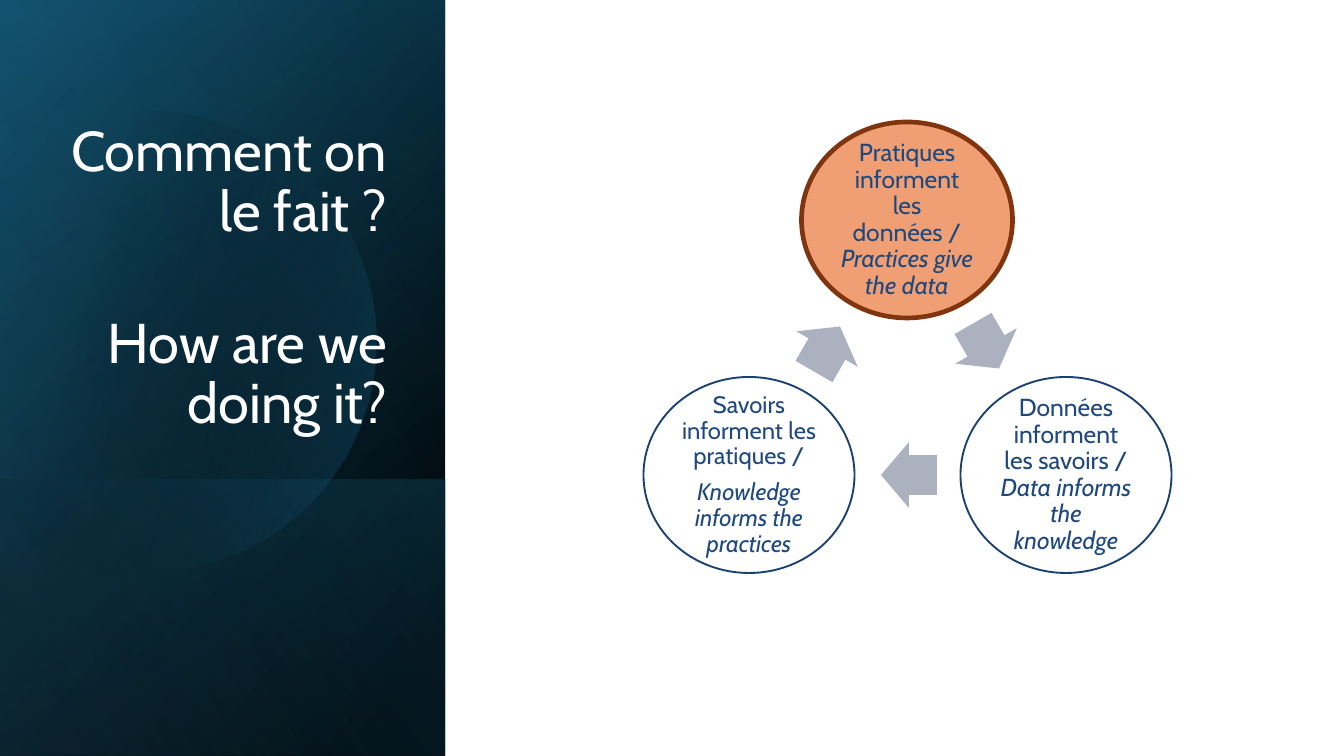
from math import acos, cos, sin

from lxml import etree
from pptx import Presentation
from pptx.dml.color import RGBColor
from pptx.enum.shapes import MSO_SHAPE
from pptx.enum.text import MSO_ANCHOR, PP_ALIGN
from pptx.oxml.ns import qn
from pptx.util import Pt

RECT, OVAL, ARROW = MSO_SHAPE.RECTANGLE, MSO_SHAPE.OVAL, MSO_SHAPE.RIGHT_ARROW
MIDDLE, BOTTOM = MSO_ANCHOR.MIDDLE, MSO_ANCHOR.BOTTOM
CENTER, RIGHT = PP_ALIGN.CENTER, PP_ALIGN.RIGHT

WHITE = RGBColor(0xFF, 0xFF, 0xFF)
BLACK = RGBColor(0x00, 0x00, 0x00)
NAVY = RGBColor(0x10, 0x48, 0x62)
TEAL = RGBColor(0x15, 0x60, 0x82)
SKY = RGBColor(0x46, 0xB1, 0xE1)
INK = RGBColor(0x1F, 0x49, 0x7D)
EDGE = RGBColor(0x1B, 0x41, 0x71)
ORANGE = RGBColor(0xE9, 0x71, 0x32)
BROWN = RGBColor(0x80, 0x35, 0x0E)
GRAY = RGBColor(0xAB, 0xB1, 0xBF)

PX = 914400 / 67.2
WIDE, HIGH = 1344, 756
PANEL = 445

# Gradient stops: position %, colour, opacity %
BASE = [(8, BLACK, 100), (100, NAVY, 100)]
GLOW = [(0, BLACK, 0), (99, TEAL, 46)]
FOOT = [(2, TEAL, 29), (100, BLACK, 30)]
DISC = [(29, BLACK, 0), (100, TEAL, 43)]
SHEEN = [(0, BLACK, 0), (99, SKY, 11)]

# Panel layers: top, stops, angle
UNDER = [(0, BASE, 50), (0, GLOW, 30), (480, FOOT, 130)]
OVER = [(0, SHEEN, 120)]

TITLE = [[("Comment on le fait ?", False)], [("How are we doing it?", False)]]

# Stages: centre, paragraphs, text size, fill, opacity %, line colour, line width
STAGES = [
    ((907, 220), [[("Pratiques informent les données / ", False),
                   ("Practices give the data", True)]],
     26.4, ORANGE, 68, BROWN, 5),
    ((1066, 475), [[("Données informent les savoirs / ", False),
                    ("Data informs the knowledge", True)]],
     26.4, WHITE, 100, EDGE, 2),
    ((749, 475), [[("Savoirs informent les pratiques /", False)],
                  [("Knowledge informs the practices", True)]],
     25.5, WHITE, 100, EDGE, 2),
]
STAGE_W, STAGE_H = 211, 196

# Arrows: centre, size, turn
ARROWS = [((986, 346), (52, 71), 60),
          ((909, 475), (56, 66), 180),
          ((827, 349), (52, 71), 300)]


def emu(*nums):
    return [round(n * PX) for n in nums]


def add(kind, mid, size, turn=0):
    """Add a plain shape centred on mid."""
    (x, y), (w, h) = mid, size
    shape = slide.shapes.add_shape(kind, *emu(x - w / 2, y - h / 2, w, h))
    shape.rotation = turn
    shape.shadow.inherit = False
    shape.line.fill.background()
    return shape


def fade(node, alpha):
    """Set the opacity of a colour node, in percent."""
    if alpha < 100:
        etree.SubElement(node, qn("a:alpha")).set("val", str(alpha * 1000))


def blend(shape, stops, angle):
    """Fill with a linear gradient, angle clockwise in degrees."""
    shape.fill.gradient()
    grad = shape._element.spPr.find(qn("a:gradFill"))
    grad.set("rotWithShape", "1")
    grad.find(qn("a:lin")).set("ang", str(angle * 60000))
    row = grad.find(qn("a:gsLst"))
    for old in list(row):
        row.remove(old)
    for pos, color, alpha in stops:
        stop = etree.SubElement(row, qn("a:gs"), pos=str(pos * 1000))
        fade(etree.SubElement(stop, qn("a:srgbClr"), val=str(color)), alpha)


def layer(top, stops, angle):
    """Add a panel layer from top to the slide's foot, turned on its side."""
    tall = HIGH - top
    shape = add(RECT, (PANEL / 2, top + tall / 2), (tall, PANEL), 90)
    shape._element.spPr.xfrm.set("flipH", "1")
    blend(shape, stops, angle)


def write(shape, paras, size, color, align, anchor, after, pad):
    """Write paragraphs of (text, italic) runs; pad is left, top, right, bottom."""
    frame = shape.text_frame
    frame.word_wrap = True
    frame.vertical_anchor = anchor
    (frame.margin_left, frame.margin_top,
     frame.margin_right, frame.margin_bottom) = emu(*pad)
    for i, runs in enumerate(paras):
        para = frame.add_paragraph() if i else frame.paragraphs[0]
        para.alignment = align
        para.line_spacing = 0.9
        para.space_after = Pt(after)
        for text, italic in runs:
            run = para.add_run()
            run.text = text
            font = run.font
            font.name, font.size, font.italic = "Cabin", Pt(size), italic
            font.color.rgb = color


def add_disc(x, y, radius, left, steps=90):
    """Add a circle cut off by a vertical edge at left."""
    end = acos((left - x) / radius)
    turns = [end * (2 * i / steps - 1) for i in range(steps + 1)]
    first, *rest = [emu(x + radius * cos(t), y + radius * sin(t)) for t in turns]
    path = slide.shapes.build_freeform(*first)
    path.add_line_segments(rest, close=True)
    disc = path.convert_to_shape()
    disc.shadow.inherit = False
    disc.line.fill.background()
    blend(disc, DISC, 14)


deck = Presentation()
deck.slide_width, deck.slide_height = emu(WIDE, HIGH)
slide = deck.slides.add_slide(deck.slide_layouts[6])

for part in UNDER:
    layer(*part)
add_disc(145, 342, 231, -15)
for part in OVER:
    layer(*part)

box = slide.shapes.add_textbox(*emu(52, 65, 353, 374))
write(box, TITLE, 60, WHITE, RIGHT, BOTTOM, 76, (7, 3, 18, 3))

for mid, paras, size, fill, alpha, edge, width in STAGES:
    stage = add(OVAL, mid, (STAGE_W, STAGE_H))
    stage.fill.solid()
    stage.fill.fore_color.rgb = fill
    fade(stage._element.spPr.find(qn("a:solidFill"))[0], alpha)
    stage.line.color.rgb = edge
    stage.line.width = Pt(width)
    write(stage, paras, size, INK, CENTER, MIDDLE, 10.8, (6, 6, 6, 6))

for mid, size, turn in ARROWS:
    arrow = add(ARROW, mid, size, turn)
    arrow.adjustments[0] = 0.6
    arrow.adjustments[1] = 0.5
    arrow.fill.solid()
    arrow.fill.fore_color.rgb = GRAY

deck.save("out.pptx")
